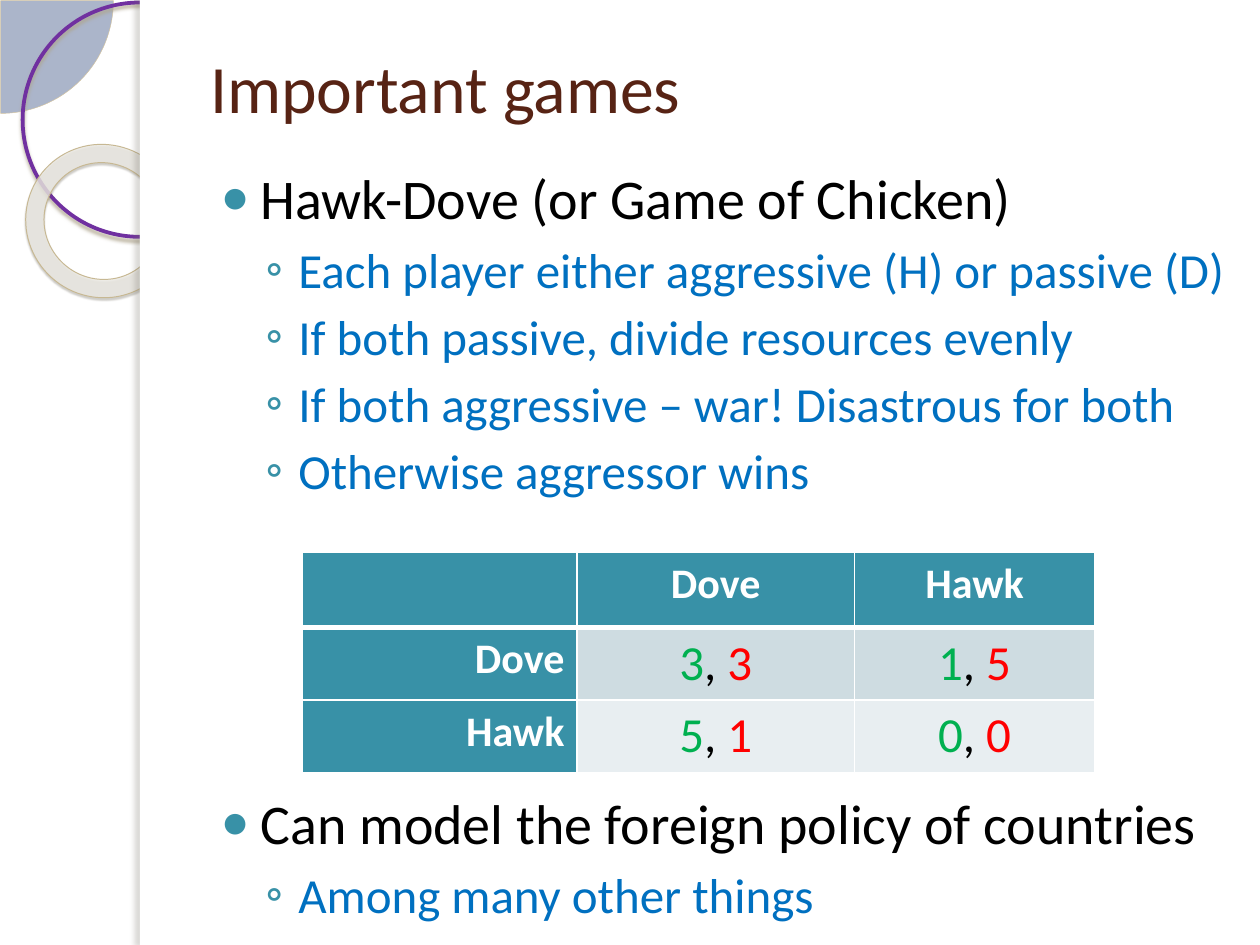
from typing import NamedTuple, Optional
from lxml import etree
from pptx import Presentation
from pptx import util as u
from pptx.dml.color import RGBColor
from pptx.enum import shapes, text
from pptx.oxml import ns

CELL = u.Inches(0.1)
FONT = "Calibri"
WHITE = RGBColor(0xFF, 0xFF, 0xFF)
BLACK = RGBColor(0, 0, 0)
BROWN = RGBColor(0x57, 0x23, 0x14)
BLUE = RGBColor(0x00, 0x70, 0xC0)
TEAL = RGBColor(0x38, 0x91, 0xA7)
GREEN = RGBColor(0x00, 0xB0, 0x50)
RED = RGBColor(0xFF, 0, 0)
NAVY = RGBColor(0x00, 0x20, 0x60)
PURPLE = RGBColor(0x70, 0x30, 0xA0)
CREAM = RGBColor(0xEB, 0xE9, 0xE3)
SAND = RGBColor(0xD3, 0xC3, 0x9F)
TAN = RGBColor(0xC7, 0xB8, 0x93)
MIST = RGBColor(0xCE, 0xDC, 0xE1)
PALE = RGBColor(0xE8, 0xEE, 0xF1)


class Box(NamedTuple):
    col: float
    row: float
    wide: float
    high: float

    def emu(self) -> list:
        return [round(n * CELL) for n in self]


class Shade(NamedTuple):
    color: RGBColor
    alpha: int
    blur: float
    dist: float
    angle: int


class Decor(NamedTuple):
    kind: shapes.MSO_SHAPE
    box: Box
    fill: Optional[RGBColor] = None
    alpha: int = 100
    line: Optional[RGBColor] = None
    width: float = 0
    turn: float = 0
    adjust: tuple = ()
    shade: Optional[Shade] = None


class Level(NamedTuple):
    size: float
    color: RGBColor
    left: float
    hang: float
    gap: float
    mark: str
    scale: int


KIND = shapes.MSO_SHAPE
DECOR = [
    Decor(KIND.PIE, Box(-8.9, -8.9, 17.9, 17.9), NAVY, 33, SAND, 0.25, adjust=(0, 54)),
    Decor(KIND.OVAL, Box(1.8, 0.2, 18.6, 18.6), line=PURPLE, width=2.15,
          shade=Shade(RGBColor(0xB0, 0xA6, 0x8F), 85, 2, 2, 90)),
    Decor(KIND.DONUT, Box(2, 11.5, 12.3, 12.1), CREAM, 80, TAN, 0.58, 38.6, (0.12,),
          Shade(RGBColor(0x5A, 0x54, 0x44), 35, 1, 1.2, 75)),
    Decor(KIND.RECTANGLE, Box(11.1, 0, 88.9, 75), WHITE),
    Decor(KIND.RECTANGLE, Box(11.1, 0, 0.8, 75), WHITE,
          shade=Shade(RGBColor(0x73, 0x6F, 0x63), 25, 3, 3, 180)),
]

TOP = Level(32, BLACK, 0.4, 0.31, 6, "●", 80)
SUB = Level(28, BLUE, 0.7, 0.26, 4.7, "◦", 100)
LISTS = [
    (Box(15.7, 12.5, 84.3, 30), [
        (TOP, "Hawk-Dove (or Game of Chicken)"),
        (SUB, "Each player either aggressive (H) or passive (D)"),
        (SUB, "If both passive, divide resources evenly"),
        (SUB, "If both aggressive – war! Disastrous for both"),
        (SUB, "Otherwise aggressor wins"),
    ]),
    (Box(15.7, 62.1, 84.3, 12.5), [
        (TOP, "Can model the foreign policy of countries"),
        (SUB, "Among many other things"),
    ]),
]

MOVES = ["Dove", "Hawk"]
PAYS = [[(3, 3), (1, 5)], [(5, 1), (0, 0)]]
COLS = [21.8, 22, 19.1]
ROWS = [6, 5.75, 5.75]


def add(root, tag: str, **attrs):
    return etree.SubElement(root, ns.qn(tag), {k: str(v) for k, v in attrs.items()})


def tint(root, color: RGBColor, alpha: int = 100) -> None:
    node = add(root, "a:srgbClr", val=color)
    if alpha < 100:
        add(node, "a:alpha", val=alpha * 1000)


def write(para, words: str, *, size: float, color: RGBColor,
          bold: bool = False, align=text.PP_ALIGN.LEFT) -> None:
    para.alignment = align
    run = para.add_run()
    run.text = words
    font = run.font
    font.name, font.size, font.bold = FONT, u.Pt(size), bold
    font.color.rgb = color


def adorn(slide, item: Decor) -> None:
    shape = slide.shapes.add_shape(item.kind, *item.box.emu())
    shape.rotation = item.turn
    for i, value in enumerate(item.adjust):
        shape.adjustments[i] = value
    if item.fill is None:
        shape.fill.background()
    else:
        shape.fill.solid()
        shape.fill.fore_color.rgb = item.fill
        if item.alpha < 100:
            node = shape.element.spPr.find(".//" + ns.qn("a:srgbClr"))
            add(node, "a:alpha", val=item.alpha * 1000)
    if item.line is None:
        shape.line.fill.background()
    else:
        shape.line.color.rgb = item.line
        shape.line.width = u.Pt(item.width)
    shape.shadow.inherit = False
    if item.shade:
        shade = item.shade
        root = shape.element.spPr.find(ns.qn("a:effectLst"))
        node = add(root, "a:outerShdw", blurRad=u.Pt(shade.blur),
                   dist=u.Pt(shade.dist), dir=shade.angle * 60000,
                   algn="ctr", rotWithShape=0)
        tint(node, shade.color, shade.alpha)


def bullet(para, level: Level) -> None:
    props = para._p.get_or_add_pPr()
    props.set("marL", str(u.Inches(level.left)))
    props.set("indent", str(-u.Inches(level.hang)))
    tint(add(props, "a:buClr"), TEAL)
    add(props, "a:buSzPct", val=level.scale * 1000)
    add(props, "a:buFont", typeface=FONT)
    add(props, "a:buChar", char=level.mark)


def outline(slide, box: Box, items: list) -> None:
    frame = slide.shapes.add_textbox(*box.emu()).text_frame
    frame.word_wrap = True
    for i, (level, words) in enumerate(items):
        para = frame.add_paragraph() if i else frame.paragraphs[0]
        bullet(para, level)
        para.space_before = u.Pt(level.gap if i else 0)
        write(para, words, size=level.size, color=level.color)


def paint(cell, color: RGBColor, head: bool) -> None:
    props = cell._tc.get_or_add_tcPr()
    for side in "LRTB":
        wide = 3 if head and side == "B" else 1
        edge = add(props, f"a:ln{side}", w=u.Pt(wide))
        tint(add(edge, "a:solidFill"), WHITE)
    cell.fill.solid()
    cell.fill.fore_color.rgb = color


def payoff(slide) -> None:
    box = Box(24, 43.8, sum(COLS), sum(ROWS))
    grid = slide.shapes.add_table(len(ROWS), len(COLS), *box.emu()).table
    for col, wide in zip(grid.columns, COLS):
        col.width = round(wide * CELL)
    for row, high in zip(grid.rows, ROWS):
        row.height = round(high * CELL)
    mid, right = text.PP_ALIGN.CENTER, text.PP_ALIGN.RIGHT
    for r in range(len(ROWS)):
        for c in range(len(COLS)):
            cell = grid.cell(r, c)
            para = cell.text_frame.paragraphs[0]
            label = r == 0 or c == 0
            paint(cell, TEAL if label else (MIST, PALE)[r - 1], r == 0)
            if not label:
                own, other = PAYS[r - 1][c - 1]
                for words, color in ((own, GREEN), (", ", BLACK), (other, RED)):
                    write(para, str(words), size=28, color=color, align=mid)
            elif r or c:
                write(para, MOVES[max(r, c) - 1], size=24, color=WHITE,
                      bold=True, align=right if r else mid)


def main() -> None:
    deck = Presentation()
    deck.slide_width, deck.slide_height = 100 * CELL, 75 * CELL
    slide = deck.slides.add_slide(deck.slide_layouts[5])
    for item in DECOR:
        adorn(slide, item)
    title = slide.shapes.title
    title.element.getparent().append(title.element)
    title.left, title.top, title.width, title.height = Box(15.7, 3, 82, 7.7).emu()
    frame = title.text_frame
    frame.auto_size = text.MSO_AUTO_SIZE.NONE
    frame.vertical_anchor = text.MSO_ANCHOR.MIDDLE
    write(frame.paragraphs[0], "Important games", size=38.7, color=BROWN)
    for box, items in LISTS:
        outline(slide, box, items)
    payoff(slide)
    deck.save("out.pptx")


if __name__ == "__main__":
    main()
